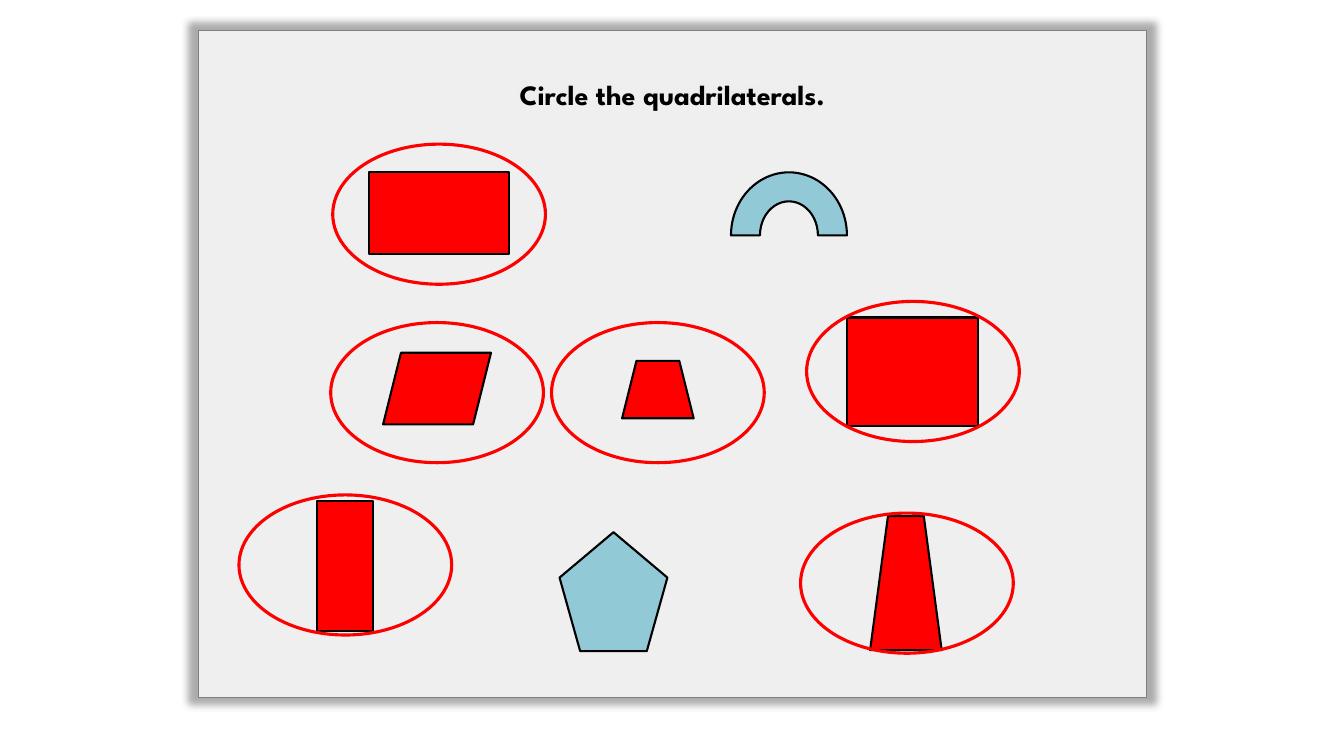
from lxml import etree
from pptx import Presentation
from pptx.dml.color import RGBColor
from pptx.enum.shapes import MSO_SHAPE as SHAPE
from pptx.enum.text import MSO_ANCHOR, PP_ALIGN
from pptx.oxml import parse_xml
from pptx.oxml.ns import nsdecls, qn
from pptx.util import Inches, Pt

RED, BLUE, BLACK, WHITE, GRAY = "FF0000", "92C9D6", "000000", "FFFFFF", "808080"
RING_W, RING_H = 2.11, 1.39

QUADRILATERALS = [
    (SHAPE.PARALLELOGRAM, (1.83, 3.2, 1.07, 0.71)),
    (SHAPE.RECTANGLE, (1.69, 1.41, 1.39, 0.81)),
    (SHAPE.RECTANGLE, (1.17, 4.67, 0.56, 1.29)),
    (SHAPE.TRAPEZOID, (6.66, 4.82, 0.71, 1.33)),
    (SHAPE.RECTANGLE, (6.43, 2.85, 1.3, 1.08)),
    (SHAPE.TRAPEZOID, (4.2, 3.28, 0.71, 0.57)),
]
OTHERS = [
    (SHAPE.REGULAR_PENTAGON, (3.58, 4.98, 1.07, 1.18)),
    (SHAPE.BLOCK_ARC, (5.28, 1.41, 1.15, 1.25)),
]
RINGS = [(1.33, 1.13), (1.31, 2.9), (0.4, 4.61), (3.5, 2.9), (6.03, 2.69), (5.97, 4.79)]


def color(value):
    return RGBColor.from_string(value)


def add_figure(s, kind, box, fill, line, width):
    sp = s.shapes.add_shape(kind, *(Inches(v) for v in box))
    sp.shadow.inherit = False
    if fill:
        sp.fill.solid()
        sp.fill.fore_color.rgb = color(fill)
    else:
        sp.fill.background()
    sp.line.color.rgb = color(line)
    sp.line.width = Pt(width)
    return sp


def add_glow(sp):
    props = sp.element.spPr
    alpha = etree.SubElement(props.find(f"{qn('a:solidFill')}/{qn('a:srgbClr')}"), qn("a:alpha"))
    alpha.set("val", "82000")
    props.find(qn("a:effectLst")).append(parse_xml(
        f'<a:outerShdw {nsdecls("a")} blurRad="{Pt(5)}" dist="0" sx="102000" sy="102000" '
        f'algn="ctr" rotWithShape="0"><a:srgbClr val="{BLACK}">'
        '<a:alpha val="40000"/></a:srgbClr></a:outerShdw>'))


def add_panel(s, box, title):
    sp = add_figure(s, SHAPE.RECTANGLE, box, WHITE, GRAY, 1)
    add_glow(sp)
    tf = sp.text_frame
    tf.word_wrap = True
    tf.vertical_anchor = MSO_ANCHOR.TOP
    tf.margin_top = Inches(0.47)
    p = tf.paragraphs[0]
    p.alignment = PP_ALIGN.CENTER
    r = p.add_run()
    r.text = title
    r.font.name = "League Spartan"
    r.font.size = Pt(20)
    r.font.bold = True
    r.font.color.rgb = color(BLACK)


def add_figures(s, box):
    left, top = box[:2]
    for fill, figures in ((RED, QUADRILATERALS), (BLUE, OTHERS)):
        for kind, (x, y, w, h) in figures:
            add_figure(s, kind, (left + x, top + y, w, h), fill, BLACK, 1.5)


def add_rings(s, box):
    left, top = box[:2]
    for x, y in RINGS:
        add_figure(s, SHAPE.OVAL, (left + x, top + y, RING_W, RING_H), None, RED, 2.25)


def main():
    prs = Presentation()
    prs.slide_width, prs.slide_height = Inches(13.33), Inches(7.5)
    s = prs.slides.add_slide(prs.slide_layouts[6])
    panel = (1.97, 0.3, 9.4, 6.62)
    add_panel(s, panel, "Circle the quadrilaterals.")
    add_figures(s, panel)
    add_rings(s, panel)
    prs.save("out.pptx")


if __name__ == "__main__":
    main()
